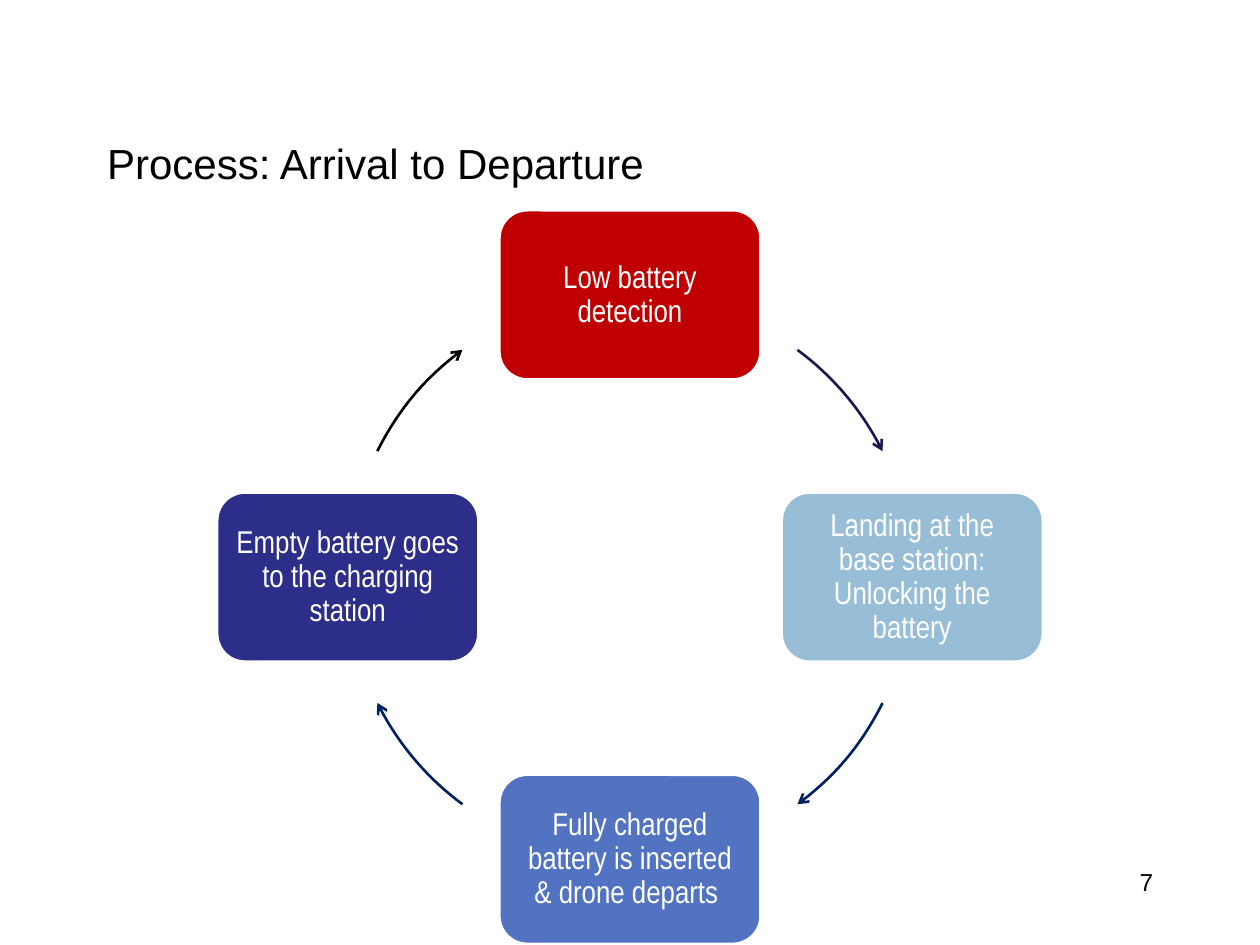
from dataclasses import dataclass
from math import cos, radians, sin

from lxml.etree import SubElement
from pptx import Presentation
from pptx.dml.color import RGBColor
from pptx.enum.shapes import MSO_SHAPE
from pptx.enum.text import MSO_ANCHOR, PP_ALIGN
from pptx.oxml.ns import qn
from pptx.slide import Slide
from pptx.text.text import TextFrame
from pptx.util import Inches, Pt

WHITE = RGBColor(0xFF, 0xFF, 0xFF)
BLACK = RGBColor(0x00, 0x00, 0x00)
RED = RGBColor(0xC0, 0x00, 0x00)
SKY = RGBColor(0x98, 0xBD, 0xD6)
BLUE = RGBColor(0x52, 0x73, 0xC1)
INDIGO = RGBColor(0x2D, 0x2D, 0x8A)
DUSK = RGBColor(0x19, 0x19, 0x4D)
NAVY = RGBColor(0x00, 0x20, 0x60)

WIDTH, HEIGHT = Inches(10), Inches(7.5)
MID_X, MID_Y = WIDTH / 2, Inches(4.58)
RADIUS = Inches(2.24)
BOX_W, BOX_H = Inches(2.08), Inches(1.35)
SIDE_GAP, END_GAP = 26.5, 36.4


@dataclass
class Step:
    text: str
    fill: RGBColor
    arrow: RGBColor
    angle: float
    leave: float
    reach: float


STEPS = [
    Step("Low battery detection", RED, DUSK,
         270, END_GAP, SIDE_GAP),
    Step("Landing at the base station: Unlocking the battery", SKY, NAVY,
         0, SIDE_GAP, END_GAP),
    Step("Fully charged battery is inserted & drone departs ", BLUE, NAVY,
         90, END_GAP, SIDE_GAP),
    Step("Empty battery goes to the charging station", INDIGO, BLACK,
         180, SIDE_GAP, END_GAP),
]


def write(frame: TextFrame, text: str, *, size: float, font: str = "Arial",
          color: RGBColor = BLACK, align: PP_ALIGN = PP_ALIGN.LEFT,
          anchor: MSO_ANCHOR = MSO_ANCHOR.MIDDLE, spacing: float = 1.0,
          inset: float | None = None) -> None:
    frame.word_wrap = True
    frame.vertical_anchor = anchor
    if inset is not None:
        frame.margin_left = frame.margin_right = Inches(inset)
        frame.margin_top = frame.margin_bottom = Inches(inset / 2)
    para = frame.paragraphs[0]
    para.alignment = align
    para.line_spacing = spacing
    run = para.add_run()
    run.text = text
    run.font.size = Pt(size)
    run.font.name = font
    run.font.color.rgb = color


def draw_box(slide: Slide, step: Step) -> None:
    x = MID_X + RADIUS * cos(radians(step.angle))
    y = MID_Y + RADIUS * sin(radians(step.angle))
    box = slide.shapes.add_shape(
        MSO_SHAPE.ROUNDED_RECTANGLE,
        int(x - BOX_W / 2), int(y - BOX_H / 2), BOX_W, BOX_H)
    box.shadow.inherit = False
    box.fill.solid()
    box.fill.fore_color.rgb = step.fill
    box.line.color.rgb = WHITE
    box.line.width = Pt(2)
    write(box.text_frame, step.text, size=18, font="Arial Narrow", color=WHITE,
          align=PP_ALIGN.CENTER, spacing=0.9, inset=0.08)


def draw_arc(slide: Slide, step: Step) -> None:
    arc = slide.shapes.add_shape(
        MSO_SHAPE.ARC, int(MID_X - RADIUS), int(MID_Y - RADIUS),
        2 * RADIUS, 2 * RADIUS)
    arc.shadow.inherit = False
    arc.fill.background()
    ends = step.angle + step.leave, step.angle + 90 - step.reach
    for index, degrees in enumerate(ends):
        arc.adjustments[index] = degrees % 360 * 0.6
    arc.line.color.rgb = step.arrow
    arc.line.width = Pt(1.5)
    line = arc.element.spPr.find(qn("a:ln"))
    SubElement(line, qn("a:tailEnd"), type="arrow")


def main() -> None:
    deck = Presentation()
    deck.slide_width, deck.slide_height = WIDTH, HEIGHT
    slide = deck.slides.add_slide(deck.slide_layouts[5])

    title = slide.shapes.title
    title.left, title.top = Inches(0.75), Inches(0.92)
    title.width, title.height = Inches(8.5), Inches(0.75)
    write(title.text_frame, "Process: Arrival to Departure", size=24)

    number = slide.shapes.add_textbox(
        Inches(7.17), Inches(6.83), Inches(2.08), Inches(0.5))
    write(number.text_frame, "7", size=14, align=PP_ALIGN.RIGHT,
          anchor=MSO_ANCHOR.TOP)

    for step in STEPS:
        draw_box(slide, step)
        draw_arc(slide, step)

    deck.save("out.pptx")


if __name__ == "__main__":
    main()
